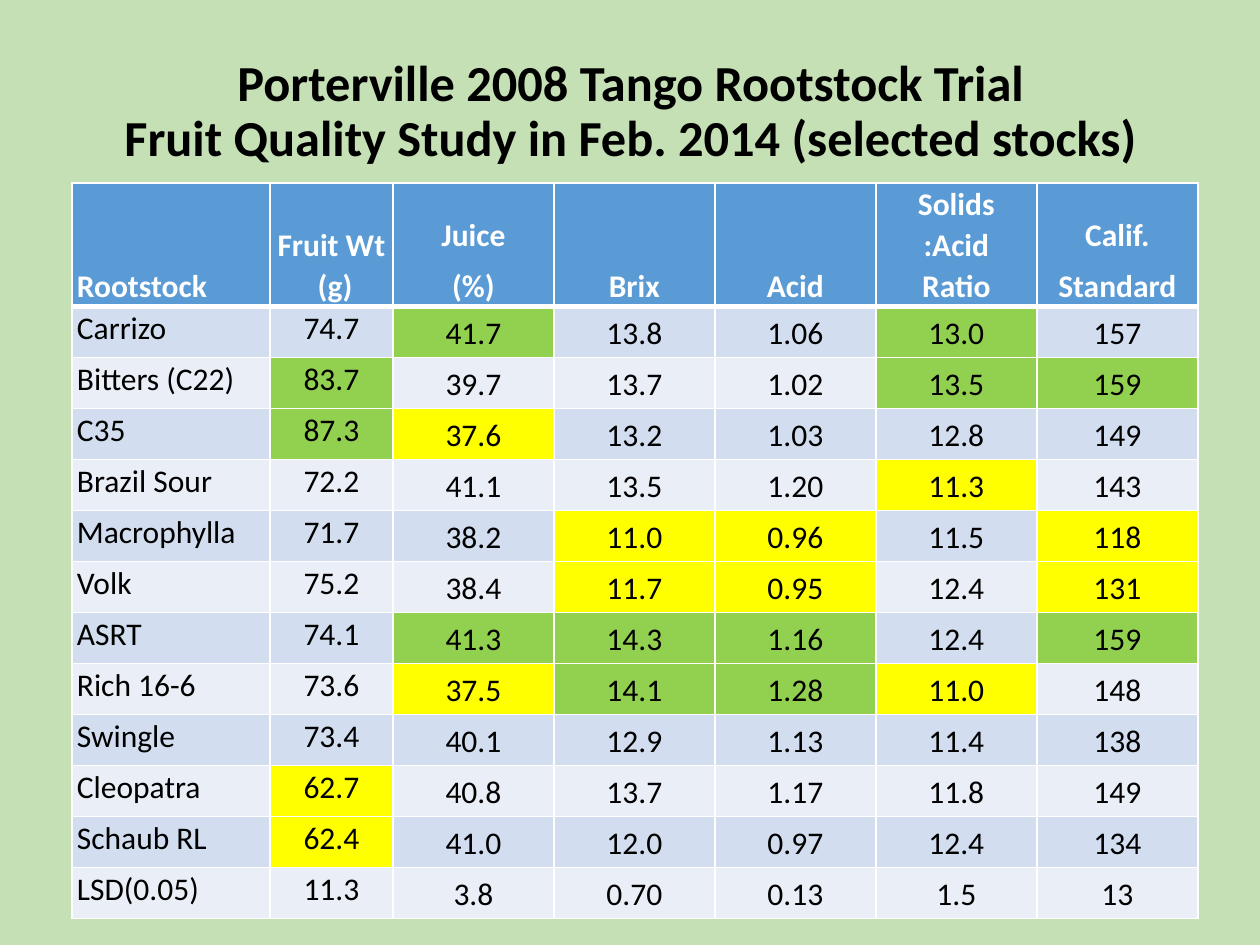
from pptx import Presentation
from pptx.dml.color import RGBColor
from pptx.enum.text import MSO_ANCHOR as Anchor, MSO_AUTO_SIZE as AutoSize, PP_ALIGN as Align
from pptx.oxml import parse_xml
from pptx.oxml.ns import nsdecls
from pptx.util import Pt

PX = 914400 // 126  # EMU per px
FONT = "Calibri"
HEADER, BANDS = "5B9BD5", ["D2DEEF", "EAEFF7"]
MARKS = {"+": "92D050", "-": "FFFF00"}  # high and low values


def color(hex_text):
    return RGBColor.from_string(hex_text)


def format_text(frame, para_format, size, ink, bold):
    for para in frame.paragraphs:
        for name, value in para_format.items():
            setattr(para, name, value)
        for span in para.runs:
            for name, value in {"name": FONT, "size": Pt(size), "bold": bold}.items():
                setattr(span.font, name, value)
            span.font.color.rgb = color(ink)


deck = Presentation()
deck.slide_width, deck.slide_height = 1260 * PX, 945 * PX
page = deck.slides.add_slide(deck.slide_layouts[5])
page.background.fill.solid()
page.background.fill.fore_color.rgb = color("C5E0B4")

# Title
title = page.shapes.title
box = {"left": 88, "top": 18, "width": 1086, "height": 189}
for name, value in box.items():
    setattr(title, name, value * PX)
frame = title.text_frame
frame.text = "Porterville 2008 Tango Rootstock Trial\vFruit Quality Study in Feb. 2014 (selected stocks)"
frame.word_wrap = True
frame.auto_size = AutoSize.NONE
frame.vertical_anchor = Anchor.MIDDLE
format_text(frame, {"alignment": Align.CENTER, "line_spacing": 0.9}, 28.8, "000000", True)

# Table content: "\n" starts a paragraph, "\v" a line; + and - mark highlighted values
headings = ["Rootstock", "Fruit Wt\v (g)", "Juice\n(%)", "Brix", "Acid",
            "Solids\v:Acid\nRatio", "Calif.\nStandard"]
trial = [
    ["Carrizo", "74.7", "+41.7", "13.8", "1.06", "+13.0", "157"],
    ["Bitters (C22)", "+83.7", "39.7", "13.7", "1.02", "+13.5", "+159"],
    ["C35", "+87.3", "-37.6", "13.2", "1.03", "12.8", "149"],
    ["Brazil Sour", "72.2", "41.1", "13.5", "1.20", "-11.3", "143"],
    ["Macrophylla", "71.7", "38.2", "-11.0", "-0.96", "11.5", "-118"],
    ["Volk", "75.2", "38.4", "-11.7", "-0.95", "12.4", "-131"],
    ["ASRT", "74.1", "+41.3", "+14.3", "+1.16", "12.4", "+159"],
    ["Rich 16-6", "73.6", "-37.5", "+14.1", "+1.28", "-11.0", "148"],
    ["Swingle", "73.4", "40.1", "12.9", "1.13", "11.4", "138"],
    ["Cleopatra", "-62.7", "40.8", "13.7", "1.17", "11.8", "149"],
    ["Schaub RL", "-62.4", "41.0", "12.0", "0.97", "12.4", "134"],
    ["LSD(0.05)", "11.3", "3.8", "0.70", "0.13", "1.5", "13"],
]
rows = [headings] + trial
widths = [198, 123] + [161] * 5
heights = [123] + [51] * len(trial)

# Table grid
table = page.shapes.add_table(len(rows), len(widths), 72 * PX, 183 * PX,
                              sum(widths) * PX, sum(heights) * PX).table
for column, width in zip(table.columns, widths):
    column.width = width * PX
for row, height in zip(table.rows, heights):
    row.height = height * PX

# Cells
for r, values in enumerate(rows):
    for c, text in enumerate(values):
        cell = table.cell(r, c)
        is_header = r == 0
        fill = HEADER if is_header else MARKS.get(text[0], BANDS[(r - 1) % 2])
        cell.text = text.lstrip("+-")
        cell.margin_left = cell.margin_right = 5 * PX
        cell.margin_top = cell.margin_bottom = 0
        if is_header:
            cell.vertical_anchor = Anchor.BOTTOM
        else:
            cell.vertical_anchor = Anchor.TOP if c < 2 else Anchor.MIDDLE

        gap = Pt(0) if is_header and c == 5 else Pt(3)
        para_format = {"alignment": Align.CENTER if c else Align.LEFT, "line_spacing": 1.07,
                       "space_before": gap, "space_after": gap}
        format_text(cell.text_frame, para_format, 18,
                    "FFFFFF" if is_header else "000000", is_header)

        # White borders, heavy below the header
        borders = {"lnL": 1, "lnR": 1, "lnT": 3 if r == 1 else 1, "lnB": 3 if is_header else 1}
        for side, points in borders.items():
            cell._tc.get_or_add_tcPr().append(parse_xml(
                f'<a:{side} {nsdecls("a")} w="{Pt(points)}"><a:solidFill>'
                f'<a:srgbClr val="FFFFFF"/></a:solidFill></a:{side}>'))
        cell.fill.solid()
        cell.fill.fore_color.rgb = color(fill)

deck.save("out.pptx")
